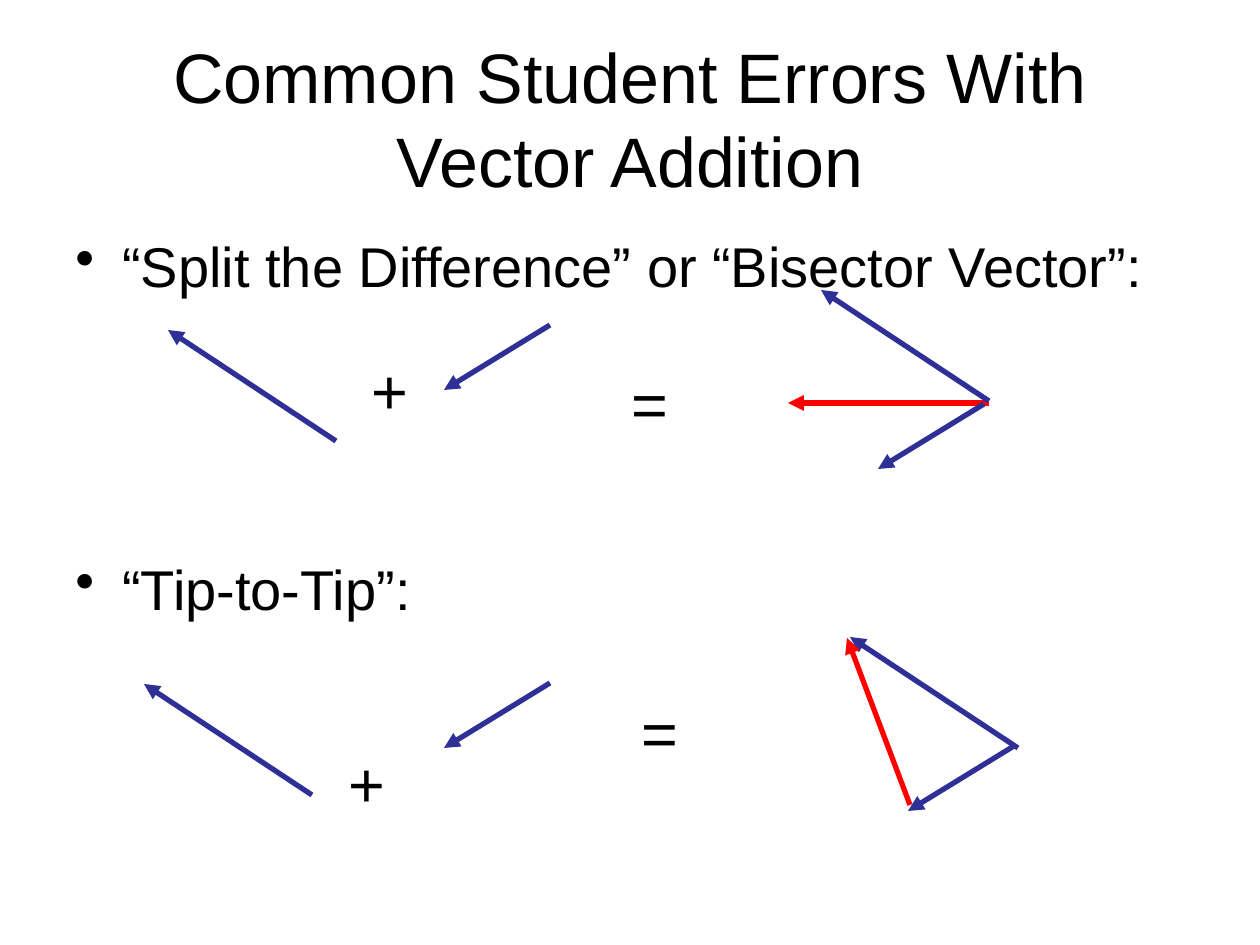
from dataclasses import dataclass

from lxml import etree
from pptx import Presentation
from pptx.dml.color import RGBColor
from pptx.enum.shapes import MSO_CONNECTOR
from pptx.enum.text import MSO_ANCHOR, PP_ALIGN
from pptx.oxml.ns import qn
from pptx.util import Pt

EMU_PER_PX = 914400 / 126
STRAIGHT = MSO_CONNECTOR.STRAIGHT
TOP, MIDDLE = MSO_ANCHOR.TOP, MSO_ANCHOR.MIDDLE
LEFT, CENTER = PP_ALIGN.LEFT, PP_ALIGN.CENTER
BLACK, BLUE, RED = "000000", "2F2F98", "FF0000"
LONG = (-168, -111)
SHORT = (-106, 65)


@dataclass(frozen=True)
class Vector:
    x: int
    y: int
    delta: tuple[int, int]
    color: str = BLUE


@dataclass(frozen=True)
class Label:
    text: str
    x: int
    y: int
    width: int = 63
    height: int = 89
    size: int = 36
    align: PP_ALIGN = LEFT
    anchor: MSO_ANCHOR = TOP
    wrap: bool = False


TITLE = Label("Common Student Errors With Vector Addition", 63, 38, 1134, 158,
              40, CENTER, MIDDLE, True)
ERRORS = Label("“Split the Difference” or “Bisector Vector”:\n“Tip-to-Tip”:",
               63, 221, 1134, 683, 32, wrap=True)
OPERATORS = [
    Label("+", 359, 345),
    Label("=", 619, 358),
    Label("+", 336, 738),
    Label("=", 629, 687),
]
VECTORS = [
    Vector(336, 441, LONG),
    Vector(550, 325, SHORT),
    Vector(989, 403, (-201, 0), RED),
    Vector(989, 401, LONG),
    Vector(984, 404, SHORT),
    Vector(312, 795, LONG),
    Vector(550, 683, SHORT),
    Vector(1018, 748, LONG),
    Vector(1014, 746, SHORT),
    Vector(910, 805, (-63, -167), RED),
]


def px(value: int) -> int:
    return round(value * EMU_PER_PX)


def rgb(color: str) -> RGBColor:
    return RGBColor.from_string(color)


def add_label(slide, label: Label):
    shape = slide.shapes.add_textbox(px(label.x), px(label.y), px(label.width), px(label.height))
    frame = shape.text_frame
    frame.text = label.text
    frame.word_wrap = label.wrap
    frame.vertical_anchor = label.anchor
    for paragraph in frame.paragraphs:
        paragraph.alignment = label.align
        paragraph.font.name = "Arial"
        paragraph.font.size = Pt(label.size)
        paragraph.font.color.rgb = rgb(BLACK)
    return frame


def add_bullets(frame, indent: int, gap: float) -> None:
    for paragraph in frame.paragraphs:
        properties = paragraph._p.get_or_add_pPr()
        properties.set("marL", str(px(indent)))
        properties.set("indent", str(-px(indent)))
        bullet = etree.Element(qn("a:buChar"), char="•")
        properties.insert(0, bullet)
    for paragraph in frame.paragraphs[1:]:
        paragraph.space_before = Pt(gap)


def add_vector(slide, vector: Vector) -> None:
    across, down = vector.delta
    connector = slide.shapes.add_connector(
        STRAIGHT, px(vector.x), px(vector.y), px(vector.x + across), px(vector.y + down))
    connector.line.color.rgb = rgb(vector.color)
    connector.line.width = Pt(3)
    etree.SubElement(connector.line._get_or_add_ln(), qn("a:tailEnd"), type="triangle")
    etree.SubElement(connector._element.spPr, qn("a:effectLst"))


def main() -> None:
    presentation = Presentation()
    presentation.slide_width = px(1260)
    presentation.slide_height = px(945)
    slide = presentation.slides.add_slide(presentation.slide_layouts[6])
    add_label(slide, TITLE)
    errors = add_label(slide, ERRORS)
    errors.margin_top = px(11)
    add_bullets(errors, indent=47, gap=146)
    for operator in OPERATORS:
        add_label(slide, operator)
    for vector in VECTORS:
        add_vector(slide, vector)
    presentation.save("out.pptx")


if __name__ == "__main__":
    main()
